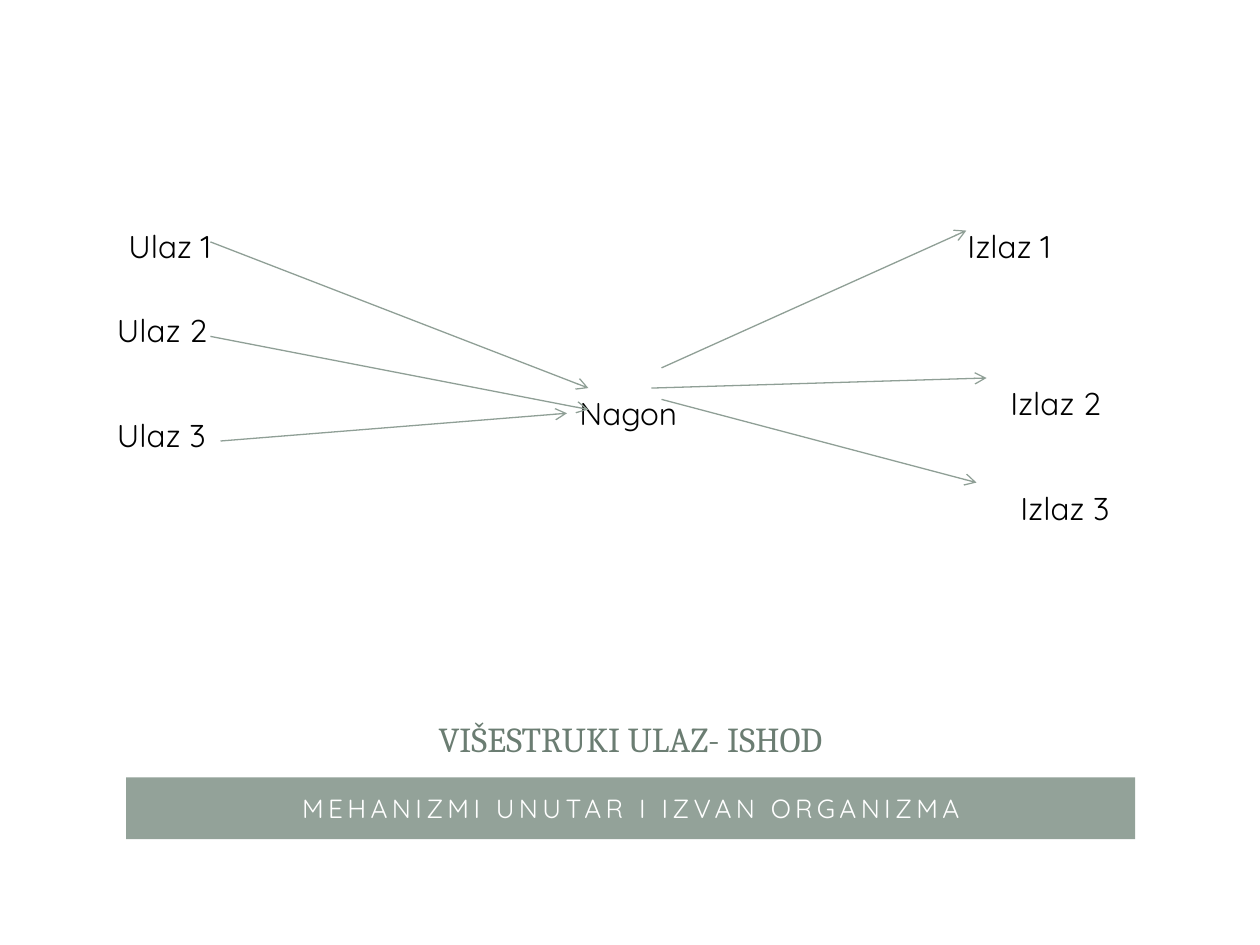
from dataclasses import dataclass
from typing import Optional

from lxml.etree import SubElement
from pptx import Presentation
from pptx.dml.color import RGBColor
from pptx.enum.shapes import MSO_CONNECTOR, MSO_SHAPE
from pptx.enum.text import MSO_ANCHOR, MSO_AUTO_SIZE, PP_ALIGN
from pptx.oxml.ns import qn
from pptx.shapes.autoshape import Shape
from pptx.shapes.connector import Connector
from pptx.slide import Slide
from pptx.util import Inches, Pt


@dataclass(frozen=True)
class Theme:
    background: RGBColor = RGBColor(0xFF, 0xFF, 0xFF)
    band: RGBColor = RGBColor(0x93, 0xA2, 0x99)
    title: RGBColor = RGBColor(0x6B, 0x7D, 0x72)
    label: RGBColor = RGBColor(0, 0, 0)
    arrow: RGBColor = RGBColor(0x8F, 0x9F, 0x96)
    title_font: str = "Cambria"
    body_font: str = "Quicksand"
    title_size: float = 20
    label_size: float = 18
    subtitle_size: float = 15
    subtitle_spacing: float = 2.5
    arrow_width: float = 0.75


@dataclass(frozen=True)
class Area:
    left: float
    top: float
    width: float
    height: float

    def lengths(self) -> list[Inches]:
        return [Inches(n) for n in (self.left, self.top, self.width, self.height)]


@dataclass(frozen=True)
class Label:
    text: str
    area: Area
    wrap: bool = True


@dataclass(frozen=True)
class Arrow:
    start: tuple[float, float]
    end: tuple[float, float]
    joins_drive: bool = False


THEME = Theme()
BAND = Area(1, 6.17, 8.01, 0.49)
SUBTITLE = Label("MEHANIZMI UNUTAR I IZVAN ORGANIZMA", Area(1.05, 6.19, 7.92, 0.44))
TITLE = Label("VIŠESTRUKI ULAZ- ISHOD", Area(1, 5.58, 8.01, 0.57))
DRIVE = Label("Nagon", Area(4.5, 3.08, 1.05, 0.4), wrap=False)
INPUTS = [
    Label("Ulaz 1", Area(0.92, 1.75, 1.75, 0.42)),
    Label("Ulaz 2", Area(0.83, 2.42, 1.58, 0.4)),
    Label("Ulaz 3", Area(0.83, 3.25, 1.08, 0.42)),
]
OUTPUTS = [
    Label("Izlaz 1", Area(7.58, 1.75, 1.42, 0.42)),
    Label("Izlaz 2", Area(7.92, 3, 1, 0.4)),
    Label("Izlaz 3", Area(8, 3.83, 1.17, 0.42)),
]
ARROWS = [
    Arrow((1.67, 1.92), (4.67, 3.08)),
    Arrow((1.67, 2.67), (4.67, 3.25)),
    Arrow((1.75, 3.5), (4.5, 3.29), joins_drive=True),
    Arrow((5.25, 2.92), (7.67, 1.83)),
    Arrow((5.17, 3.08), (7.83, 3)),
    Arrow((5.25, 3.17), (7.75, 3.83)),
]

LABEL_FORMAT = {"name": THEME.body_font, "size": Pt(THEME.label_size)}
TITLE_FORMAT = {"name": THEME.title_font, "size": Pt(THEME.title_size)}
SUBTITLE_FORMAT = {"name": THEME.body_font, "size": Pt(THEME.subtitle_size)}


def add_text(page: Slide, label: Label, font_format: dict, color: RGBColor) -> Shape:
    box = page.shapes.add_textbox(*label.area.lengths())
    box.text_frame.word_wrap = label.wrap
    span = box.text_frame.paragraphs[0].add_run()
    span.text = label.text
    for name, value in font_format.items():
        setattr(span.font, name, value)
    span.font.color.rgb = color
    return box


def add_label(page: Slide, label: Label) -> Shape:
    box = add_text(page, label, LABEL_FORMAT, THEME.label)
    box.text_frame.auto_size = MSO_AUTO_SIZE.SHAPE_TO_FIT_TEXT
    return box


def add_heading(page: Slide, label: Label, font_format: dict, color: RGBColor,
                spacing: Optional[float] = None) -> Shape:
    """Add a centred line of text, with optional letter spacing in points."""
    box = add_text(page, label, font_format, color)
    box.text_frame.vertical_anchor = MSO_ANCHOR.MIDDLE
    para = box.text_frame.paragraphs[0]
    para.alignment = PP_ALIGN.CENTER
    if spacing is not None:
        para.runs[0].font._element.set("spc", str(int(spacing * 100)))
    return box


def add_band(page: Slide) -> Shape:
    band = page.shapes.add_shape(MSO_SHAPE.RECTANGLE, *BAND.lengths())
    band.shadow.inherit = False
    band.fill.solid()
    band.fill.fore_color.rgb = THEME.band
    band.line.fill.background()
    return band


def add_arrow(page: Slide, arrow: Arrow, drive: Shape) -> Connector:
    points = [Inches(n) for n in (*arrow.start, *arrow.end)]
    line = page.shapes.add_connector(MSO_CONNECTOR.STRAIGHT, *points)
    line.line.color.rgb = THEME.arrow
    line.line.width = Pt(THEME.arrow_width)
    SubElement(line.line._get_or_add_ln(), qn("a:tailEnd"), type="arrow")
    SubElement(line._element.spPr, qn("a:effectLst"))
    if arrow.joins_drive:
        line.end_connect(drive, 1)
    return line


def main() -> None:
    deck = Presentation()
    deck.slide_width, deck.slide_height = Inches(10), Inches(7.5)
    page = deck.slides.add_slide(deck.slide_layouts[6])
    page.background.fill.solid()
    page.background.fill.fore_color.rgb = THEME.background

    add_band(page)
    add_heading(page, SUBTITLE, SUBTITLE_FORMAT, THEME.background, THEME.subtitle_spacing)
    add_heading(page, TITLE, TITLE_FORMAT, THEME.title)
    drive = add_label(page, DRIVE)
    for label in INPUTS:
        add_label(page, label)
    for arrow in ARROWS:
        add_arrow(page, arrow, drive)
    for label in OUTPUTS:
        add_label(page, label)
    deck.save("out.pptx")


if __name__ == "__main__":
    main()
